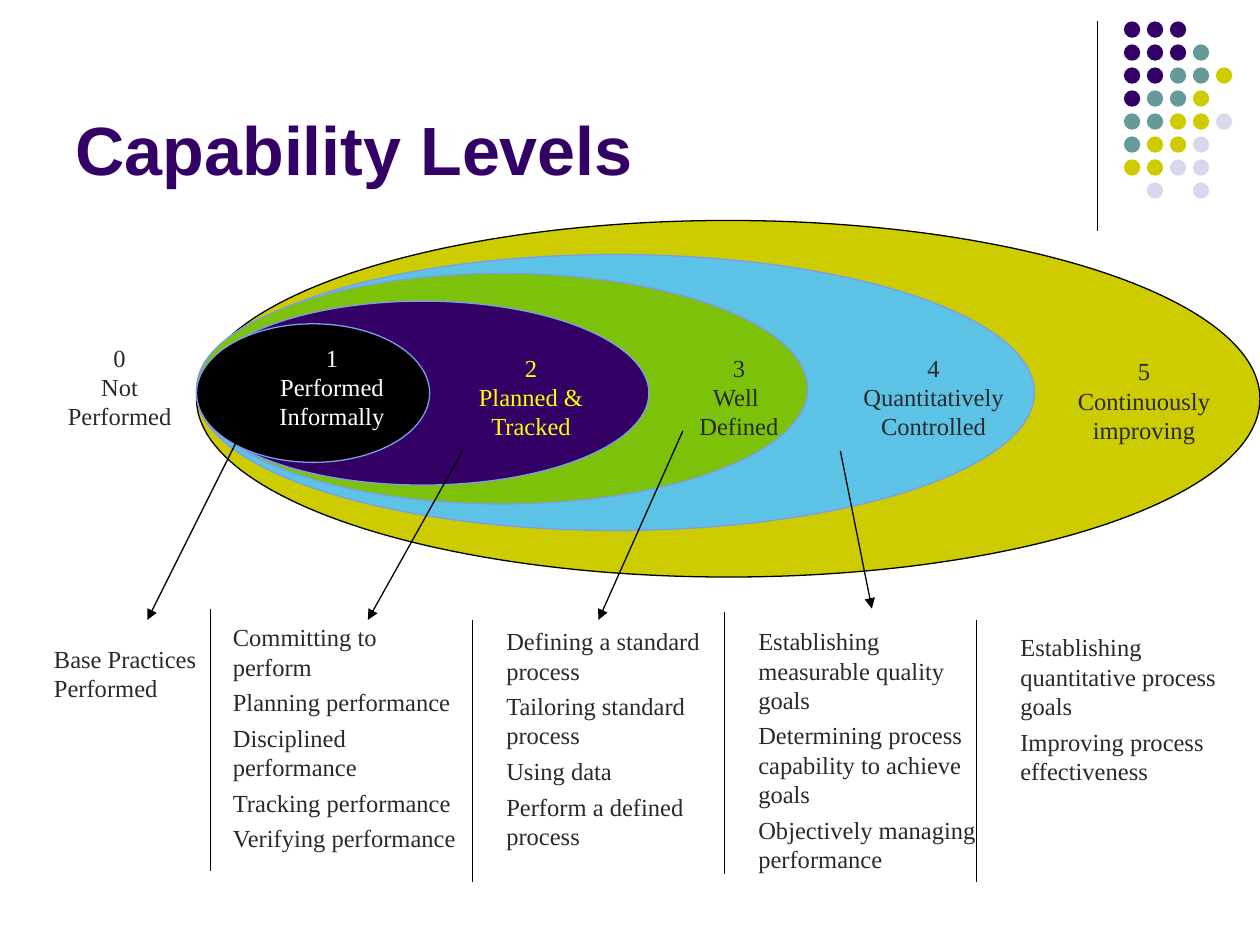
from lxml.etree import SubElement
from pptx import Presentation
from pptx.dml.color import RGBColor
from pptx.enum.shapes import MSO_CONNECTOR, MSO_SHAPE
from pptx.enum.text import MSO_ANCHOR, MSO_AUTO_SIZE, PP_ALIGN
from pptx.oxml.ns import qn
from pptx.util import Inches, Pt

COLORS = {
    "purple": "330066",
    "teal": "669999",
    "olive": "CCCC00",
    "lavender": "D8D8EC",
    "sky": "5CC2E6",
    "green": "7CC20B",
    "outline": "7E9CE8",
    "black": "000000",
    "white": "FFFFFF",
    "yellow": "FFFF00",
    "text": "292929",
}

DOT_ROWS = ["PPP", "PPPT", "PPTTO", "PTTO", "TTOOL", "TOOL", "OOLL", " L L"]
DOT_COLORS = {"P": "purple", "T": "teal", "O": "olive", "L": "lavender"}

LEVEL_LEFT = 1.56
LEVELS = [
    (1.75, 8.44, 2.83, "olive", "black"),
    (2.02, 6.65, 2.19, "sky", "outline"),
    (2.17, 4.85, 1.83, "green", "outline"),
    (2.39, 3.59, 1.46, "purple", "outline"),
    (2.57, 1.85, 1.10, "black", "outline"),
]

LABELS = [
    (0.42, 2.67, 1.06, "text", ["0", "Not", "Performed"]),
    (2.10, 2.67, 1.07, "white", ["1", "Performed", "Informally"]),
    (3.68, 2.75, 1.07, "yellow", ["2", "Planned &", "Tracked"]),
    (5.43, 2.75, 0.87, "text", ["3", "Well ", "Defined"]),
    (6.73, 2.75, 1.36, "text", ["4", "Quantitatively", "Controlled"]),
    (8.43, 2.78, 1.30, "text", ["5", "Continuously", "improving"]),
]

PRACTICES = [
    (1.75, 4.89, 1.97, ["Committing to perform", "Planning performance",
                        "Disciplined performance", "Tracking performance",
                        "Verifying performance"]),
    (3.92, 4.92, 1.91, ["Defining a standard process", "Tailoring standard process",
                        "Using data", "Perform a defined process"]),
    (5.92, 4.92, 2.08, ["Establishing measurable quality goals",
                        "Determining process capability to achieve goals",
                        "Objectively managing performance"]),
    (8.00, 4.97, 1.32, ["Establishing quantitative process goals",
                        "Improving process effectiveness"]),
]

DIVIDERS = [(1.67, 4.83), (3.75, 4.92), (5.75, 4.86), (7.75, 4.92)]
DIVIDER_HEIGHT = 2.08

ARROWS = [
    (1.92, 3.42, 1.17, 4.92),
    (3.67, 3.58, 2.92, 4.92),
    (5.42, 3.42, 4.75, 4.92),
    (6.67, 3.58, 6.92, 4.83),
]


def color(name):
    return RGBColor.from_string(COLORS[name])


def add_ellipse(shapes, left, top, width, height, fill, line=None):
    ellipse = shapes.add_shape(MSO_SHAPE.OVAL, Inches(left), Inches(top),
                               Inches(width), Inches(height))
    ellipse.shadow.inherit = False
    ellipse.fill.solid()
    ellipse.fill.fore_color.rgb = color(fill)
    if line:
        ellipse.line.color.rgb = color(line)
        ellipse.line.width = Pt(0.75)
    else:
        ellipse.line.fill.background()


def add_line(shapes, x1, y1, x2, y2, arrow=False):
    connector = shapes.add_connector(MSO_CONNECTOR.STRAIGHT, Inches(x1), Inches(y1),
                                     Inches(x2), Inches(y2))
    connector.line.color.rgb = color("black")
    connector.line.width = Pt(0.75)
    if arrow:
        SubElement(connector.line._get_or_add_ln(), qn("a:tailEnd"), type="triangle")
    SubElement(connector._element.spPr, qn("a:effectLst"))


def add_text(shapes, left, top, width, height, lines, font_color="text",
             align=PP_ALIGN.LEFT, wrap=False, space_before=0):
    box = shapes.add_textbox(Inches(left), Inches(top), Inches(width), Inches(height))
    frame = box.text_frame
    frame.word_wrap = wrap
    frame.auto_size = MSO_AUTO_SIZE.SHAPE_TO_FIT_TEXT
    frame.text = "\n".join(lines)
    for paragraph in frame.paragraphs:
        paragraph.alignment = align
        paragraph.space_before = Pt(space_before)
        paragraph.font.name = "Times New Roman"
        paragraph.font.size = Pt(14)
        paragraph.font.color.rgb = color(font_color)


def set_title(title, text):
    title.left, title.top = Inches(0.5), Inches(0.13)
    title.width, title.height = Inches(8.25), Inches(1.42)
    frame = title.text_frame
    frame.text = text
    frame.vertical_anchor = MSO_ANCHOR.BOTTOM
    paragraph = frame.paragraphs[0]
    paragraph.alignment = PP_ALIGN.LEFT
    paragraph.font.name = "Arial"
    paragraph.font.size = Pt(39)
    paragraph.font.bold = True
    paragraph.font.color.rgb = color("purple")


def add_dot_grid(slide):
    group = slide.shapes.add_group_shape()
    pitch = (9.65 - 8.92) / 4
    for row, codes in enumerate(DOT_ROWS):
        for column, code in enumerate(codes):
            if code in DOT_COLORS:
                add_ellipse(group.shapes, 8.92 + column * pitch, 0.17 + row * pitch,
                            0.13, 0.13, DOT_COLORS[code])


def add_level_diagram(slide):
    group = slide.shapes.add_group_shape()
    for top, width, height, fill, line in LEVELS:
        add_ellipse(group.shapes, LEVEL_LEFT, top, width, height, fill, line)
    for left, top, width, font_color, lines in LABELS:
        add_text(group.shapes, left, top, width, 0.8, lines, font_color, PP_ALIGN.CENTER)


def main():
    deck = Presentation()
    deck.slide_width, deck.slide_height = Inches(10), Inches(7.5)
    slide = deck.slides.add_slide(deck.slide_layouts[5])
    shapes = slide.shapes

    add_line(shapes, 8.71, 0.17, 8.71, 1.83)
    add_dot_grid(slide)
    set_title(shapes.title, "Capability Levels")
    add_level_diagram(slide)

    for x, top in DIVIDERS:
        add_line(shapes, x, top, x, top + DIVIDER_HEIGHT)
    add_text(shapes, 0.33, 5.06, 1.33, 0.57, ["Base Practices", "Performed"])
    for left, top, height, lines in PRACTICES:
        add_text(shapes, left, top, 2, height, lines, wrap=True, space_before=3.5)
    for ends in ARROWS:
        add_line(shapes, *ends, arrow=True)

    deck.save("out.pptx")


if __name__ == "__main__":
    main()
